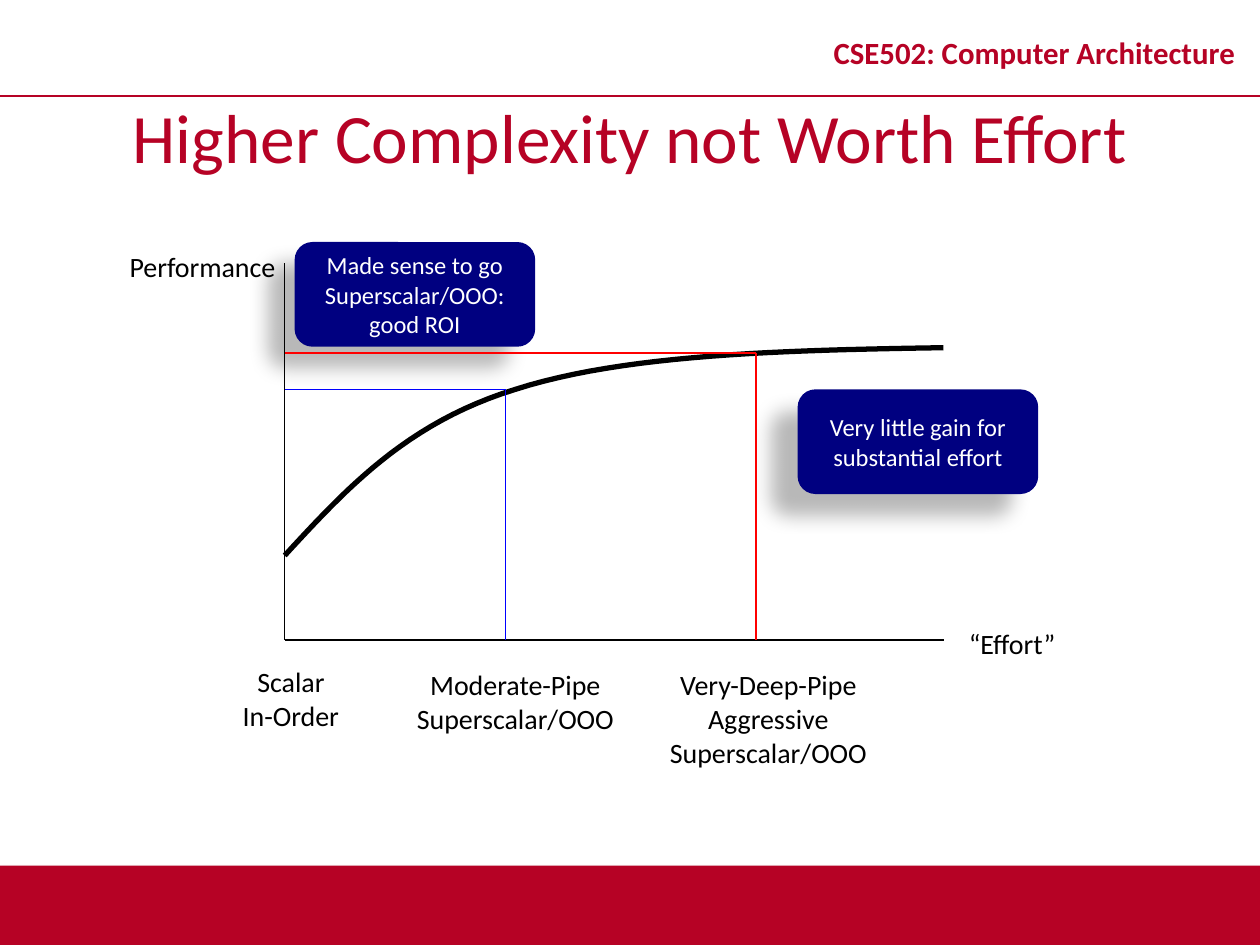
import dataclasses

import lxml.etree
import pptx
import pptx.dml.color
import pptx.enum.shapes
import pptx.enum.text
import pptx.oxml.ns
import pptx.util

Cm = pptx.util.Cm
Pt = pptx.util.Pt
SHAPE = pptx.enum.shapes.MSO_SHAPE
ANCHOR = pptx.enum.text.MSO_ANCHOR


@dataclasses.dataclass(frozen=True)
class Theme:
    font: str = "Calibri"
    crimson: str = "B60225"
    ink: str = "000000"
    navy: str = "000080"
    white: str = "FFFFFF"
    blue: str = "0000FF"
    red: str = "FF0000"
    title_size: float = 39.6
    header_size: float = 17.6
    label_size: float = 16
    callout_size: float = 14


def rgb(value):
    return pptx.dml.color.RGBColor.from_string(value)


def bezier(p0, p1, p2, p3, steps=24):
    """Points along a cubic curve, without its first point."""
    points = []
    for i in range(1, steps + 1):
        t = i / steps
        weights = ((1 - t) ** 3, 3 * t * (1 - t) ** 2, 3 * t * t * (1 - t), t ** 3)
        points.append(tuple(sum(w * p[axis] for w, p in zip(weights, (p0, p1, p2, p3)))
                            for axis in (0, 1)))
    return points


class Deck:
    def __init__(self, slide, theme):
        self.s = slide
        self.theme = theme

    def fill_text(self, sp, lines, size, color, bold=False, wrap=True,
                  anchor=ANCHOR.MIDDLE, spacing=None):
        tf = sp.text_frame
        tf.word_wrap = wrap
        tf.vertical_anchor = anchor
        for i, line in enumerate(lines):
            p = tf.add_paragraph() if i else tf.paragraphs[0]
            p.alignment = pptx.enum.text.PP_ALIGN.CENTER
            if spacing:
                p.line_spacing = spacing
            r = p.add_run()
            r.text = line
            r.font.name = self.theme.font
            r.font.size = Pt(size)
            r.font.bold = bold
            r.font.color.rgb = rgb(color)

    def text(self, box, lines, size, color, **options):
        sp = self.s.shapes.add_textbox(*map(Cm, box))
        self.fill_text(sp, lines, size, color, **options)

    def label(self, box, *lines):
        self.text(box, lines, self.theme.label_size, self.theme.ink,
                  wrap=False, anchor=ANCHOR.TOP)

    def block(self, kind, box, color, alpha, blur, distance, angle):
        """Filled shape without outline, with an outer shadow."""
        sp = self.s.shapes.add_shape(kind, *map(Cm, box))
        sp.fill.solid()
        sp.fill.fore_color.rgb = rgb(color)
        sp.line.fill.background()
        sp.shadow.inherit = False
        qn = pptx.oxml.ns.qn
        effects = sp._element.spPr.find(qn("a:effectLst"))
        shadow = lxml.etree.SubElement(
            effects, qn("a:outerShdw"), blurRad=str(Pt(blur)), dist=str(Pt(distance)),
            dir=str(angle * 60000), algn="ctr", rotWithShape="0")
        tone = lxml.etree.SubElement(shadow, qn("a:srgbClr"), val=self.theme.ink)
        lxml.etree.SubElement(tone, qn("a:alpha"), val=str(alpha * 1000))
        return sp

    def callout(self, left, top, *lines):
        sp = self.block(SHAPE.ROUNDED_RECTANGLE, (left, top, 4.85, 2.11),
                        self.theme.navy, alpha=28, blur=11.8, distance=19.7, angle=141)
        sp.adjustments[0] = 0.17
        self.fill_text(sp, lines, self.theme.callout_size, self.theme.white, wrap=False)

    def line(self, start, end, color, width):
        c = self.s.shapes.add_connector(
            pptx.enum.shapes.MSO_CONNECTOR.STRAIGHT, *map(Cm, start + end))
        c.line.color.rgb = rgb(color)
        c.line.width = Pt(width)
        lxml.etree.SubElement(c._element.spPr, pptx.oxml.ns.qn("a:effectLst"))

    def guide(self, corner, origin, color, width):
        """Draw lines from a point on the curve to both axes."""
        x, y = corner
        self.line((x, origin[1]), corner, color, width)
        self.line(corner, (origin[0], y), color, width)

    def curve(self, points, color, width):
        points = [(Cm(x), Cm(y)) for x, y in points]
        builder = self.s.shapes.build_freeform(*points[0])
        builder.add_line_segments(points[1:], close=False)
        sp = builder.convert_to_shape()
        sp.fill.background()
        sp.line.color.rgb = rgb(color)
        sp.line.width = Pt(width)
        sp.shadow.inherit = False


def main():
    prs = pptx.Presentation()
    prs.slide_width, prs.slide_height = Cm(25.4), Cm(19.05)
    theme = Theme()
    deck = Deck(prs.slides.add_slide(prs.slide_layouts[6]), theme)

    deck.block(SHAPE.RECTANGLE, (0, 17.45, 25.4, 1.6), theme.crimson,
               alpha=35, blur=3.1, distance=1.8, angle=90)
    deck.line((0, 1.93), (25.4, 1.93), theme.crimson, 1)
    deck.text((16.31, 0.33, 9.09, 1.6), ["CSE502: Computer Architecture"],
              theme.header_size, theme.crimson, bold=True, spacing=0.8)
    deck.text((0, 1.93, 25.4, 1.6), ["Higher Complexity not Worth Effort"],
              theme.title_size, theme.crimson)

    origin = (5.74, 12.9)
    axis_top, axis_right = 5.31, 19.02
    deck.line(origin, (origin[0], axis_top), theme.ink, 0.75)
    deck.line(origin, (axis_right, origin[1]), theme.ink, 0.75)
    deck.label((19.25, 12.5, 2.31, 0.94), "“Effort”")
    deck.label((2.36, 4.9, 3.45, 0.94), "Performance")

    start, knee, end = (origin[0], 11.2), (10.39, 7.85), (axis_right, 7.01)
    deck.curve([start]
               + bezier(start, (6.96, 9.88), (8.18, 8.53), knee)
               + bezier(knee, (12.6, 7.14), (15.8, 7.06), end), theme.ink, 3)

    deck.label((4.57, 13.28, 2.59, 1.63), "Scalar", "In-Order")
    deck.label((8.03, 13.34, 4.72, 1.63), "Moderate-Pipe", "Superscalar/OOO")
    deck.label((13.13, 13.34, 4.72, 2.31),
               "Very-Deep-Pipe", "Aggressive", "Superscalar/OOO")

    deck.guide((10.19, 7.85), origin, theme.blue, 0.75)
    deck.callout(5.94, 4.88, "Made sense to go", "Superscalar/OOO:", "good ROI")
    deck.guide((15.24, 7.11), origin, theme.red, 1)
    deck.callout(16.08, 7.85, "Very little gain for", "substantial effort")

    prs.save("out.pptx")


if __name__ == "__main__":
    main()
